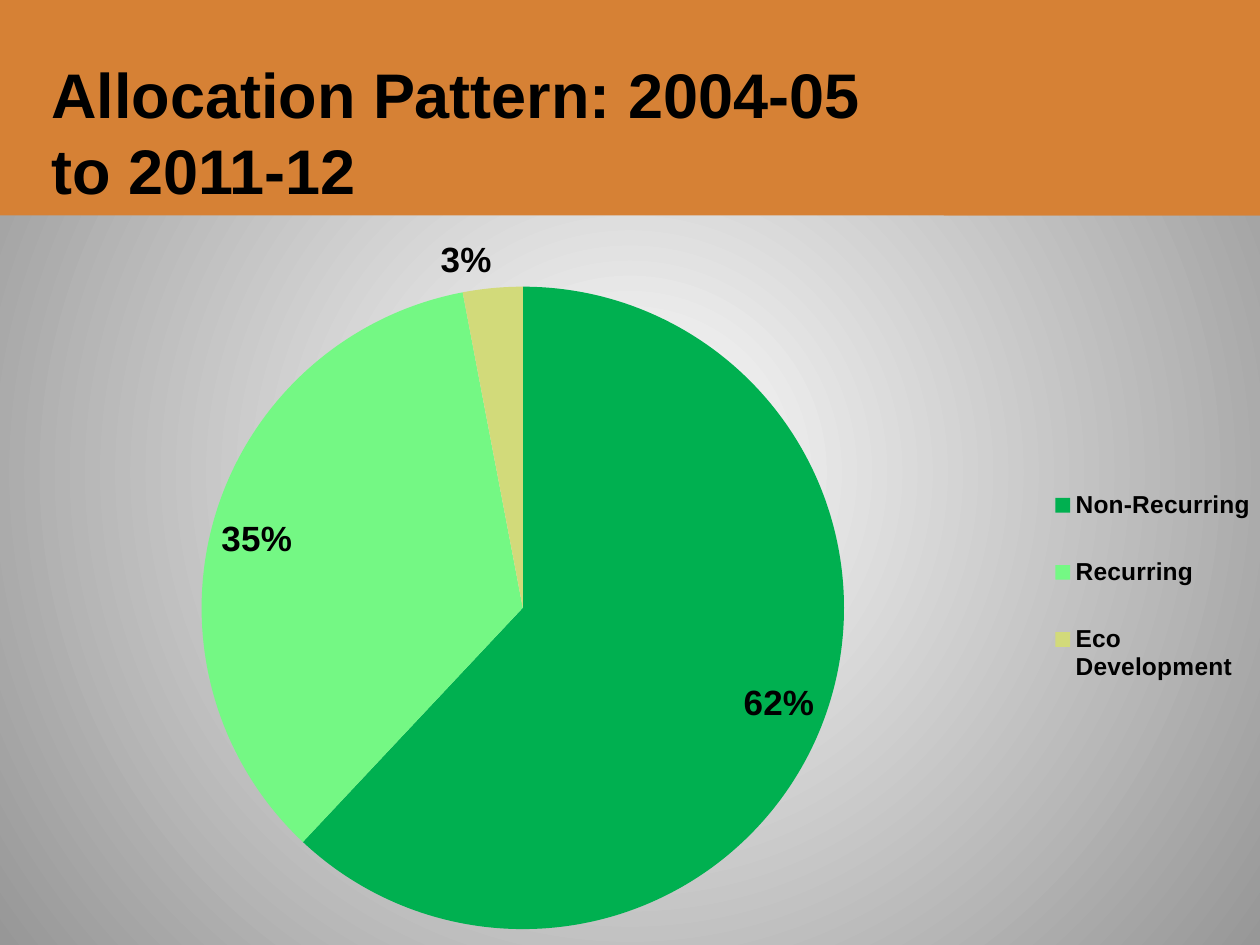
from lxml import etree
from pptx import Presentation
from pptx import util as u
from pptx.chart import data as chart_data
from pptx.dml import color as dml
from pptx.enum import chart as kinds, shapes, text
from pptx.oxml import ns, parse_xml

WIDTH, HEIGHT = u.Inches(10), u.Inches(7.5)
BAND_HEIGHT = 0.228
FONT = "Arial"
SLICES = [
    ("Non-Recurring", 62, "00B050", kinds.XL_LABEL_POSITION.INSIDE_END),
    ("Recurring", 35, "74F884", kinds.XL_LABEL_POSITION.INSIDE_END),
    ("Eco Development", 3, "D2DA7A", kinds.XL_LABEL_POSITION.OUTSIDE_END),
]


def hex_color(value):
    """Turn a hex string into a colour."""
    return dml.RGBColor.from_string(value)


def place(left, top, width, height):
    """Turn shares of the slide into lengths."""
    return (int(WIDTH * left), int(HEIGHT * top),
            int(WIDTH * width), int(HEIGHT * height))


def style_font(font, size, bold=True):
    """Set the shared typeface in black."""
    font.name, font.size, font.bold = FONT, u.Pt(size), bold
    font.color.rgb = hex_color("000000")


def paint_background(slide, inner, outer):
    """Fill the background with a circular gradient."""
    fill = slide.background.fill
    fill.gradient()
    for stop, value in zip(fill.gradient_stops, (inner, outer)):
        stop.color.rgb = hex_color(value)
    gradient = slide.element.find(".//" + ns.qn("a:gradFill"))
    gradient.remove(gradient.find(ns.qn("a:lin")))
    circle = etree.SubElement(gradient, ns.qn("a:path"), {"path": "circle"})
    etree.SubElement(circle, ns.qn("a:fillToRect"),
                     {side: "50000" for side in "ltrb"})


def add_band(slide, left, width, value):
    """Draw a plain band along the top edge."""
    band = slide.shapes.add_shape(
        shapes.MSO_SHAPE.RECTANGLE, *place(left, 0, width, BAND_HEIGHT))
    band.shadow.inherit = False
    band.fill.solid()
    band.fill.fore_color.rgb = hex_color(value)
    band.line.fill.background()


def add_title(slide, words):
    """Write the heading at the foot of the band."""
    box = slide.shapes.add_textbox(*place(0.031, 0.052, 0.72, 0.167))
    frame = box.text_frame
    frame.word_wrap = True
    frame.vertical_anchor = text.MSO_ANCHOR.BOTTOM
    frame.margin_bottom = 0
    para = frame.paragraphs[0]
    para.text = words
    style_font(para.font, 36)


def set_layout(parent, before, left, top, width, height, inner=False):
    """Fix a chart part at shares of the chart's size."""
    target = '<c:layoutTarget val="inner"/>' if inner else ""
    sizes = "".join(f'<c:{name} val="{share}"/>' for name, share in
                    zip("xywh", (left, top, width, height)))
    layout = parse_xml(
        f'<c:layout {ns.nsdecls("c")}><c:manualLayout>{target}'
        '<c:xMode val="edge"/><c:yMode val="edge"/>'
        f'{sizes}</c:manualLayout></c:layout>')
    for old in parent.findall(ns.qn("c:layout")):
        parent.remove(old)
    parent.find(ns.qn(before)).addprevious(layout)


def add_pie(slide):
    """Chart the shares with percent labels and a legend."""
    data = chart_data.CategoryChartData()
    data.categories = [name for name, *_ in SLICES]
    data.add_series("Series 1", [value for _, value, *_ in SLICES])
    chart = slide.shapes.add_chart(
        kinds.XL_CHART_TYPE.PIE, *place(0, 0.233, 1, 0.767), data).chart
    chart.has_title = False
    style_font(chart.font, 10, False)
    chart.has_legend = True
    legend = chart.legend
    legend.position = kinds.XL_LEGEND_POSITION.RIGHT
    legend.include_in_layout = False
    style_font(legend.font, 14)
    plot = chart.plots[0]
    plot.vary_by_categories = True
    series = plot.series[0]
    labels = series.data_labels
    labels.show_percentage, labels.show_value = True, False
    labels.number_format, labels.number_format_is_linked = "0%", False
    labels.position = kinds.XL_LABEL_POSITION.INSIDE_END
    style_font(labels.font, 20)
    for index, (_, _, value, position) in enumerate(SLICES):
        point = series.points[index]
        point.format.fill.solid()
        point.format.fill.fore_color.rgb = hex_color(value)
        if position != labels.position:
            label = point.data_label
            label.position = position
            style_font(label.font, 20)
            element = series.points[index].data_label._dLbl
            element.find(ns.qn("c:showVal")).set("val", "0")
            element.find(ns.qn("c:showPercent")).set("val", "1")
    area = chart.element.find(".//" + ns.qn("c:plotArea"))
    set_layout(area, "c:pieChart", 0.16, 0.09, 0.51, 0.89, inner=True)
    set_layout(legend._element, "c:overlay", 0.83, 0.32, 0.17, 0.37)


def main():
    """Build and save the slide."""
    deck = Presentation()
    deck.slide_width, deck.slide_height = WIDTH, HEIGHT
    slide = deck.slides.add_slide(deck.slide_layouts[6])
    paint_background(slide, "FFFFFF", "979797")
    for left, width in ((0, 1), (0.749, 0.251)):
        add_band(slide, left, width, "D68135")
    add_title(slide, "Allocation Pattern: 2004-05 to 2011-12")
    add_pie(slide)
    deck.save("out.pptx")


if __name__ == "__main__":
    main()
